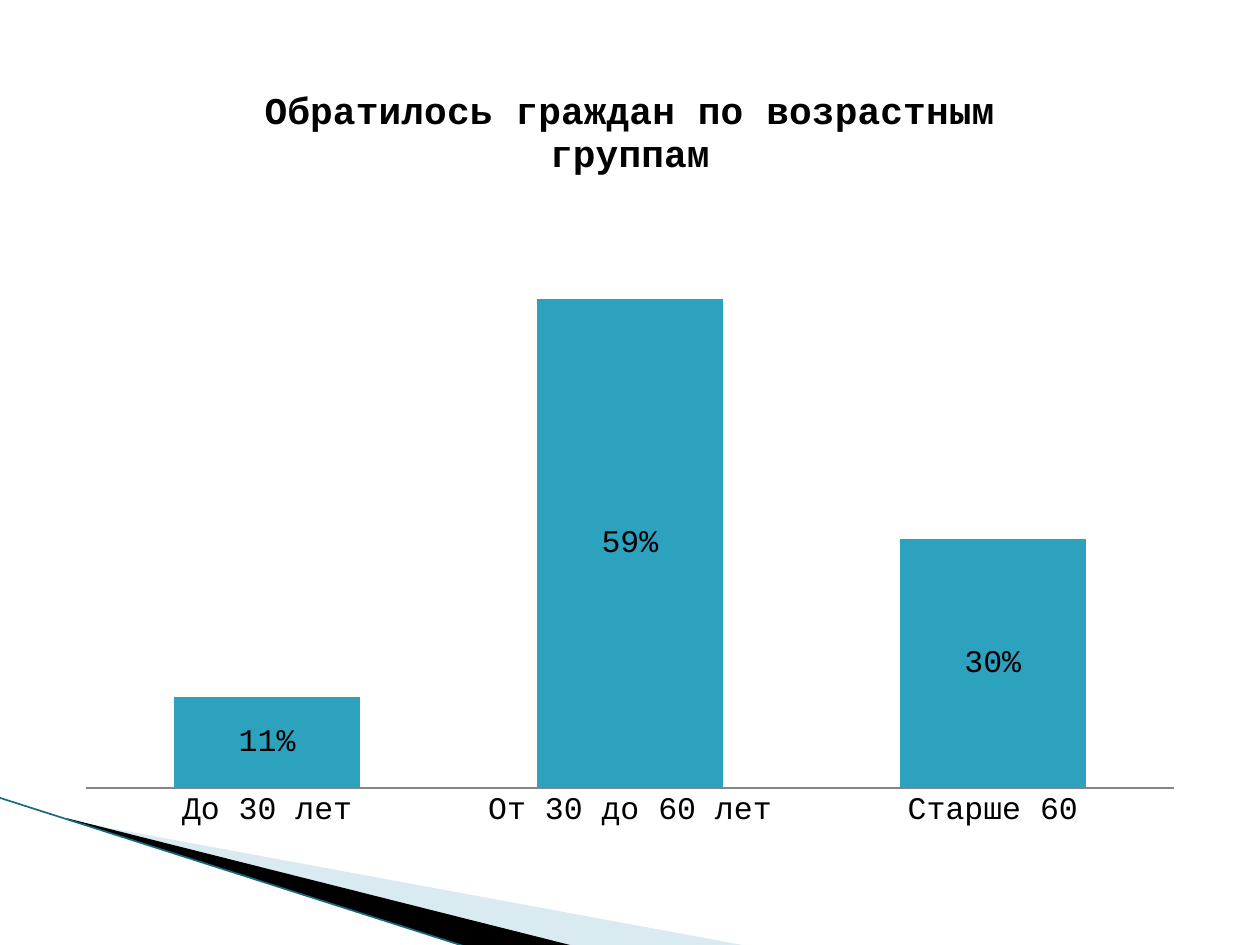
import pptx
import pptx.chart.data
import pptx.dml.color
import pptx.enum.chart
import pptx.enum.shapes
import pptx.oxml
import pptx.oxml.ns
import pptx.util
from lxml import etree

Pt = pptx.util.Pt
qn = pptx.oxml.ns.qn
FONT = "Courier New"
AGE_GROUPS = {"До 30 лет": 0.11, "От 30 до 60 лет": 0.59, "Старше 60": 0.3}
HEADING = "Обратилось граждан по возрастным группам"


def rgb(value):
    return pptx.dml.color.RGBColor.from_string(value)


def apply_format(target, values):
    for name, value in values.items():
        setattr(target, name, value)


def set_font(font, size, bold=False):
    apply_format(font, {"name": FONT, "size": Pt(size), "bold": bold})
    font.color.rgb = rgb("000000")


def set_frame(shape, frame):
    left, top, width, height = map(Pt, frame)
    shift_x, shift_y = shape.left - left, shape.top - top
    outline = next(shape._element.iter(qn("a:path")))
    outline.set("w", str(width))
    outline.set("h", str(height))
    for corner in outline.iter(qn("a:pt")):
        corner.set("x", str(int(corner.get("x")) + shift_x))
        corner.set("y", str(int(corner.get("y")) + shift_y))
    apply_format(shape, {"left": left, "top": top, "width": width, "height": height})


def add_wedge(slide, left, top, points, frame, color, opacity=100):
    corners = [(Pt(left + x), Pt(top + y)) for x, y in points]
    builder = slide.shapes.build_freeform(*corners[0])
    builder.add_line_segments(corners[1:], close=True)
    wedge = builder.convert_to_shape()
    set_frame(wedge, frame)
    wedge.shadow.inherit = False
    wedge.line.fill.background()
    wedge.fill.solid()
    wedge.fill.fore_color.rgb = rgb(color)
    if opacity < 100:
        tint = wedge._element.spPr.find(".//" + qn("a:srgbClr"))
        etree.SubElement(tint, qn("a:alpha"), val=str(opacity * 1000))


def add_corner_sweep(slide, left, top, width, height):
    pale = [(39.3, 12.9), (width, height), (328.3, height), (39.4, 12.4)]
    dark = [(38, 11.5), (329, height), (267.8, height + 0.5), (38.9, 12.2)]
    add_wedge(slide, left, top, pale,
              (left + 56.4, top - 62, 299.4, 113.6), "A0CBDC", 40)
    add_wedge(slide, left, top, dark,
              (left - 4.3, top, 299.4, 66.3), "000000")
    edge = slide.shapes.add_connector(
        pptx.enum.shapes.MSO_CONNECTOR.STRAIGHT,
        Pt(left - 0.5), Pt(top - 0.2), Pt(left + 267.1), Pt(top + height + 0.5))
    edge.line.width = Pt(0.95)
    edge.line.color.rgb = rgb("176B80")
    etree.SubElement(edge._element.spPr, qn("a:effectLst"))


def fix_plot_area(chart, x, y, w, h):
    plot_area = chart._chartSpace.chart.plotArea
    for old in plot_area.findall(qn("c:layout")):
        plot_area.remove(old)
    plot_area.insert(0, pptx.oxml.parse_xml(
        f'<c:layout {pptx.oxml.ns.nsdecls("c")}><c:manualLayout>'
        '<c:layoutTarget val="inner"/><c:xMode val="edge"/><c:yMode val="edge"/>'
        f'<c:x val="{x}"/><c:y val="{y}"/><c:w val="{w}"/><c:h val="{h}"/>'
        '</c:manualLayout></c:layout>'))


def add_age_chart(slide, left, top, width, height):
    data = pptx.chart.data.CategoryChartData(number_format="0%")
    data.categories = list(AGE_GROUPS)
    data.add_series("Series 1", list(AGE_GROUPS.values()))
    chart = slide.shapes.add_chart(
        pptx.enum.chart.XL_CHART_TYPE.COLUMN_STACKED,
        Pt(left), Pt(top), Pt(width), Pt(height), data).chart
    set_font(chart.font, 18)
    chart.has_legend = False

    heading = chart.chart_title.text_frame
    heading.text = HEADING
    set_font(heading.paragraphs[0].runs[0].font, 21.6, True)
    chart.chart_title.include_in_layout = False

    no_tick = pptx.enum.chart.XL_TICK_MARK.NONE
    ages, shares = chart.category_axis, chart.value_axis
    apply_format(ages, {"major_tick_mark": no_tick, "has_major_gridlines": False})
    ages.format.line.color.rgb = rgb("868686")
    ages.format.line.width = Pt(0.75)
    apply_format(shares, {"visible": False, "has_major_gridlines": False,
                          "minimum_scale": 0, "maximum_scale": 0.7})
    apply_format(shares.tick_labels, {"number_format": "0%",
                                      "number_format_is_linked": False})

    columns = chart.plots[0]
    apply_format(columns, {"gap_width": 95, "overlap": 100,
                           "vary_by_categories": False, "has_data_labels": True})
    apply_format(columns.data_labels, {"show_value": True, "number_format": "0%",
                                       "number_format_is_linked": False})
    set_font(columns.data_labels.font, 18)
    fill = columns.series[0].format.fill
    fill.solid()
    fill.fore_color.rgb = rgb("2DA2BF")
    fix_plot_area(chart, 0.02, 0.19, 0.96, 0.74)


def main():
    deck = pptx.Presentation()
    apply_format(deck, {"slide_width": Pt(720), "slide_height": Pt(540)})
    slide = deck.slides.add_slide(deck.slide_layouts[6])
    add_corner_sweep(slide, 0, 456, 428.4, 84.8)
    add_age_chart(slide, 36, 33.75, 648, 448)
    deck.save("out.pptx")


if __name__ == "__main__":
    main()
